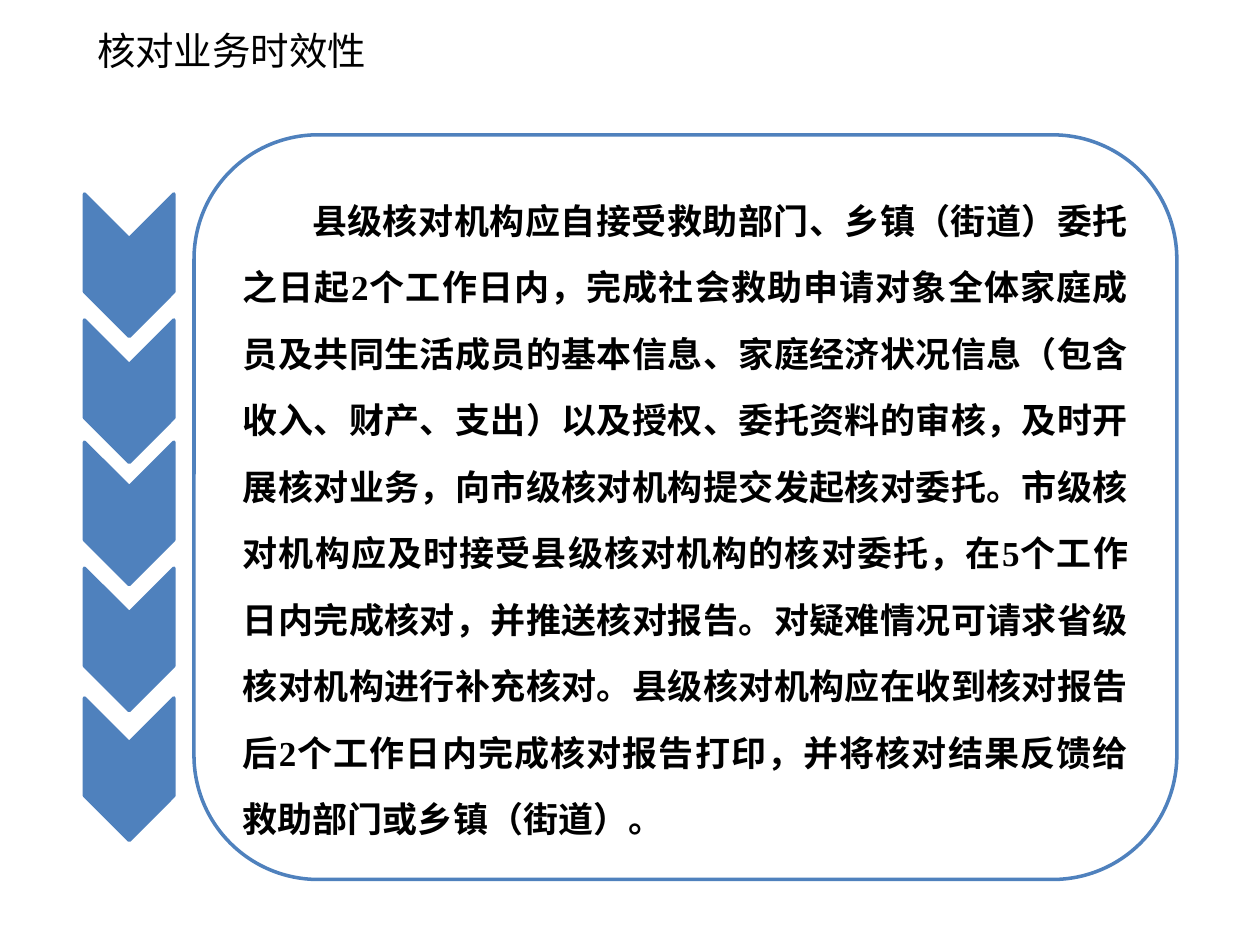
"""Build a slide on the time limits of verification work."""
import pptx
import pptx.util
import pptx.dml.color
import pptx.enum.shapes
import pptx.enum.text

Inches, Pt = pptx.util.Inches, pptx.util.Pt
RGB = pptx.dml.color.RGBColor
SHAPE = pptx.enum.shapes.MSO_SHAPE
ALIGN = pptx.enum.text.PP_ALIGN
MIDDLE = pptx.enum.text.MSO_ANCHOR.MIDDLE

BLUE = RGB(0x4F, 0x81, 0xBD)
BLACK = RGB(0, 0, 0)

TITLE = "核对业务时效性"
BODY = (
    "县级核对机构应自接受救助部门、乡镇（街道）委托之日起2个工作日内，"
    "完成社会救助申请对象全体家庭成员及共同生活成员的基本信息、"
    "家庭经济状况信息（包含收入、财产、支出）以及授权、委托资料的审核，"
    "及时开展核对业务，向市级核对机构提交发起核对委托。"
    "市级核对机构应及时接受县级核对机构的核对委托，在5个工作日内完成核对，"
    "并推送核对报告。对疑难情况可请求省级核对机构进行补充核对。"
    "县级核对机构应在收到核对报告后2个工作日内完成核对报告打印，"
    "并将核对结果反馈给救助部门或乡镇（街道）。"
)
TITLE_BOX = (0.67, 0.08, 8.11, 0.64)
PANEL_BOX = (1.54, 1.07, 7.8, 5.91)
ARROW_LEFT, ARROW_SIZE = 0.46, (1.13, 0.71)
ARROW_TOPS = (1.75, 2.75, 3.72, 4.72, 5.75)
INDENT = 0.55

TITLE_FONT = {"name": "Calibri", "size": Pt(22), "bold": False}
BODY_FONT = {"name": "Times New Roman", "size": Pt(20), "bold": True}


def write(frame, text, font, align):
    """Fill a frame with one formatted paragraph and return it."""
    frame.word_wrap = True
    frame.vertical_anchor = MIDDLE
    para = frame.paragraphs[0]
    para.alignment = align
    run = para.add_run()
    run.text = text
    for key, value in font.items():
        setattr(run.font, key, value)
    run.font.color.rgb = BLACK
    return para


def draw(slide, kind, box, fill=None):
    """Add a blue outlined shape, filled when a colour is given."""
    shape = slide.shapes.add_shape(kind, *map(Inches, box))
    shape.shadow.inherit = False
    shape.line.color.rgb = BLUE
    shape.line.width = Pt(2)
    if fill is None:
        shape.fill.background()
    else:
        shape.fill.solid()
        shape.fill.fore_color.rgb = fill
    return shape


def main():
    """Lay out the title, the text panel and the column of arrows."""
    deck = pptx.Presentation()
    deck.slide_width, deck.slide_height = Inches(10), Inches(7.5)
    slide = deck.slides.add_slide(deck.slide_layouts[5])

    title = slide.shapes.title
    for side, value in zip(("left", "top", "width", "height"), TITLE_BOX):
        setattr(title, side, Inches(value))
    write(title.text_frame, TITLE, TITLE_FONT, ALIGN.LEFT)

    panel = draw(slide, SHAPE.ROUNDED_RECTANGLE, PANEL_BOX)
    para = write(panel.text_frame, BODY, BODY_FONT, ALIGN.JUSTIFY)
    para.line_spacing = Pt(38)
    para._p.get_or_add_pPr().set("indent", str(Inches(INDENT)))

    for top in ARROW_TOPS:
        arrow = draw(slide, SHAPE.CHEVRON, (ARROW_LEFT, top, *ARROW_SIZE), BLUE)
        arrow.rotation = 90

    deck.save("out.pptx")


if __name__ == "__main__":
    main()
